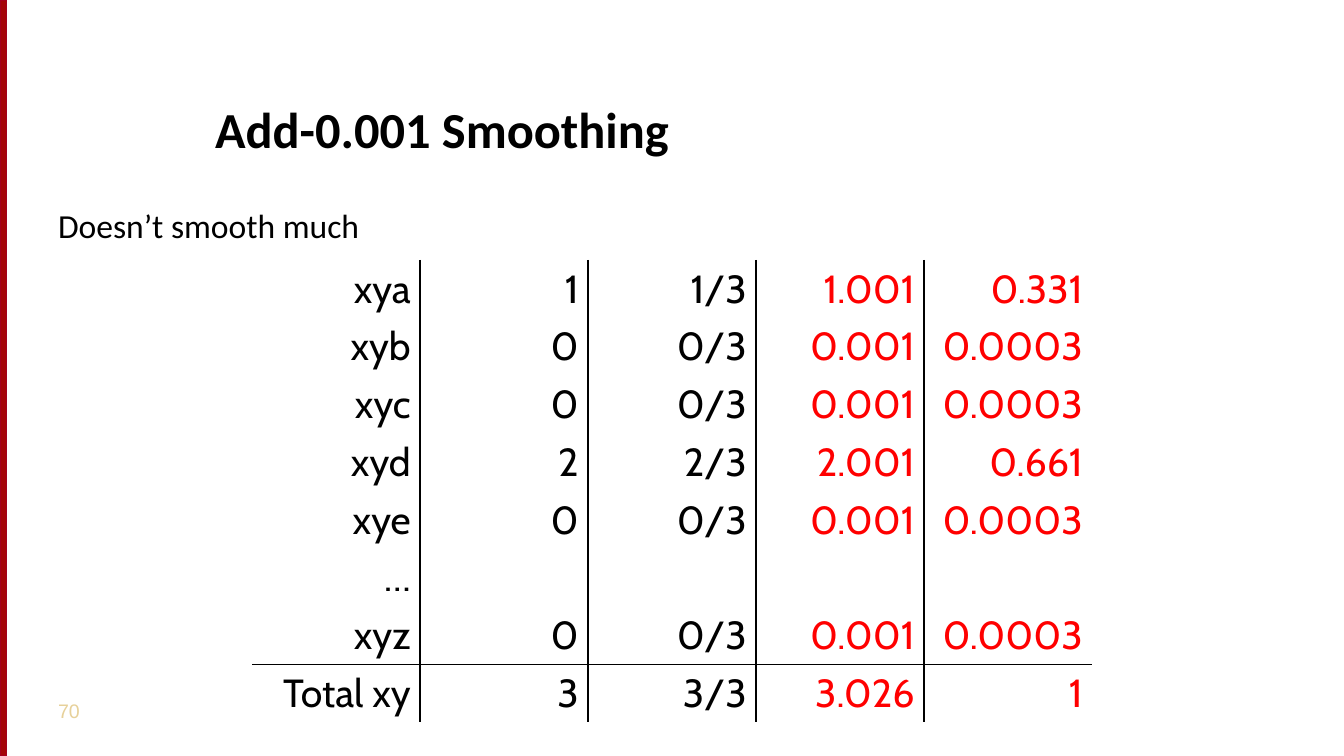
from lxml import etree
from pptx import Presentation
from pptx.dml.color import RGBColor
from pptx.enum.shapes import MSO_SHAPE
from pptx.enum.text import MSO_ANCHOR, PP_ALIGN
from pptx.oxml.ns import qn
from pptx.util import Inches, Pt

RECT = MSO_SHAPE.RECTANGLE
TOP, BOTTOM = MSO_ANCHOR.TOP, MSO_ANCHOR.BOTTOM
LEFT, RIGHT = PP_ALIGN.LEFT, PP_ALIGN.RIGHT

COLS, ROWS = 240, 135  # grid over the whole slide
COLORS = {"ink": "000000", "new": "FF0000", "bar": "A40508",
          "edge": "A4001D", "page": "E7D19A"}
COUNTS = [
    ["xya", "1", "1/3", "1.001", "0.331"],
    ["xyb", "0", "0/3", "0.001", "0.0003"],
    ["xyc", "0", "0/3", "0.001", "0.0003"],
    ["xyd", "2", "2/3", "2.001", "0.661"],
    ["xye", "0", "0/3", "0.001", "0.0003"],
    ["…", "", "", "", ""],
    ["xyz", "0", "0/3", "0.001", "0.0003"],
    ["Total xy", "3", "3/3", "3.026", "1"],
]


def color(name):
    return RGBColor.from_string(COLORS[name])


def write(frame, text, size=18, font="Calibri", ink="ink", bold=False,
          align=LEFT):
    frame.word_wrap = True
    para = frame.paragraphs[0]
    para.alignment = align
    para.font.size = Pt(size)
    if text:
        run = para.add_run()
        run.text = text
        run.font.size, run.font.name, run.font.bold = Pt(size), font, bold
        run.font.color.rgb = color(ink)


def rule(cell, sides):
    """Draw 1 pt lines on the named sides (L, R, T, B), none on the rest."""
    props = cell._tc.get_or_add_tcPr()
    for spot, side in enumerate("LRTB"):
        line = etree.Element(qn(f"a:ln{side}"), w=str(Pt(1)))
        if side in sides:
            fill = etree.SubElement(line, qn("a:solidFill"))
            etree.SubElement(fill, qn("a:srgbClr"), val=COLORS["ink"])
        else:
            etree.SubElement(line, qn("a:noFill"))
        props.insert(spot, line)


class Deck:
    def __init__(self):
        self.file = Presentation()
        self.file.slide_width = Inches(10)
        self.file.slide_height = Inches(5.625)
        self.slide = self.file.slides.add_slide(self.file.slide_layouts[5])

    def place(self, x, y, w, h):
        """Turn grid columns and rows into slide lengths."""
        col = self.file.slide_width / COLS
        row = self.file.slide_height / ROWS
        return [round(v) for v in (x * col, y * row, w * col, h * row)]

    def bar(self, *box):
        shape = self.slide.shapes.add_shape(RECT, *self.place(*box))
        shape.shadow.inherit = False
        shape.fill.solid()
        shape.fill.fore_color.rgb = color("bar")
        shape.line.color.rgb = color("edge")
        shape.line.width = Pt(0.75)

    def title(self, text, *box, **style):
        shape = self.slide.shapes.title
        shape.left, shape.top, shape.width, shape.height = self.place(*box)
        shape.text_frame.vertical_anchor = BOTTOM
        write(shape.text_frame, text, **style)

    def text(self, text, *box, **style):
        shape = self.slide.shapes.add_textbox(*self.place(*box))
        shape.text_frame.vertical_anchor = TOP
        write(shape.text_frame, text, **style)

    def table(self, data, *box):
        rows, cols = len(data), len(data[0])
        grid = self.slide.shapes.add_table(
            rows, cols, *self.place(*box)).table
        grid.first_row = grid.horz_banding = False
        for r, line in enumerate(data):
            for c, text in enumerate(line):
                cell = grid.cell(r, c)
                cell.margin_left = cell.margin_right = Inches(0.07)
                cell.margin_top = cell.margin_bottom = Inches(0.04)
                write(cell.text_frame, text, size=21, font="Cabin",
                      ink="new" if c > 2 else "ink", align=RIGHT)
                cell.fill.background()
                sides = "L" * (c > 0) + "R" * (c < cols - 1)
                sides += "T" * (r == rows - 1) + "B" * (r == rows - 2)
                rule(cell, sides)


def main():
    deck = Deck()
    deck.bar(0, 0, 1.2, ROWS)
    deck.title("Add-0.001 Smoothing", 36, 10, 196, 19.5, size=27, bold=True)
    deck.text("Doesn’t smooth much", 8, 35.5, 224, 10)
    deck.text("70", 8, 123.6, 52, 9, size=10.5, font="Arial", ink="page")
    deck.table(COUNTS, 45, 46.4, 150, 82.4)
    deck.file.save("out.pptx")


if __name__ == "__main__":
    main()
